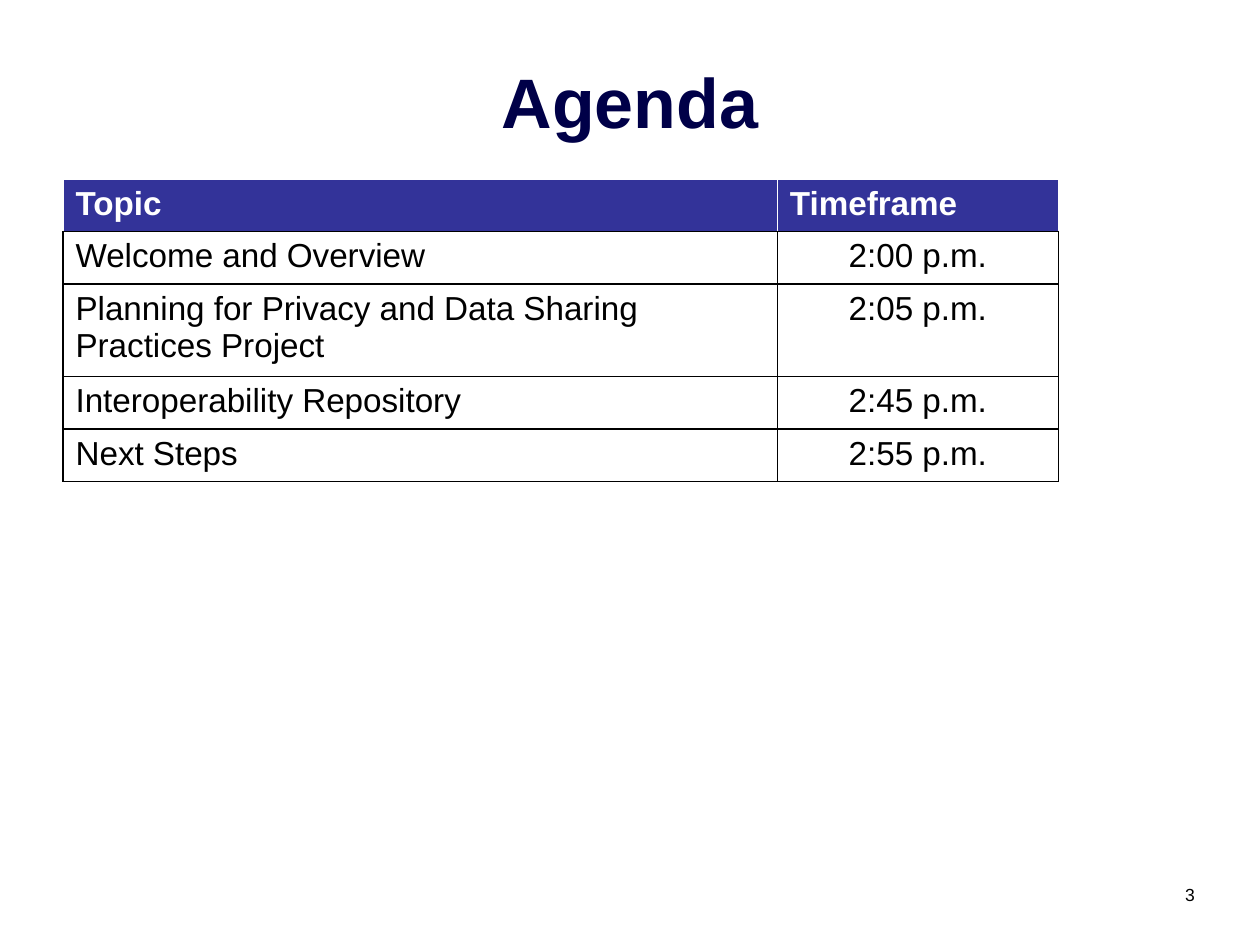
from lxml.etree import SubElement
from pptx import Presentation
from pptx.dml.color import RGBColor
from pptx.enum.text import MSO_ANCHOR, PP_ALIGN
from pptx.oxml.ns import qn
from pptx.util import Inches, Pt

COLORS = {
    "title": "000048",
    "header": "333399",
    "white": "FFFFFF",
    "black": "000000",
}

AGENDA = [
    ("Topic", "Timeframe"),
    ("Welcome and Overview", "2:00 p.m."),
    ("Planning for Privacy and Data Sharing Practices Project", "2:05 p.m."),
    ("Interoperability Repository", "2:45 p.m."),
    ("Next Steps", "2:55 p.m."),
]
COLUMN_WIDTHS = [5.67, 2.23]
ROW_HEIGHTS = [0.41, 0.41, 0.69, 0.41, 0.41]


class SlideBuilder:
    """Holds the style and the current slide."""

    font = "Arial"

    def __init__(self, slide):
        self.slide = slide

    def add_run(self, paragraph, text, size, color, bold=False):
        run = paragraph.add_run()
        run.text = text
        run.font.name = self.font
        run.font.size = Pt(size)
        run.font.bold = bold
        run.font.color.rgb = RGBColor.from_string(COLORS[color])

    def add_text(self, box, text, size, color, align, anchor, bold=False):
        left, top, width, height = map(Inches, box)
        frame = self.slide.shapes.add_textbox(left, top, width, height).text_frame
        frame.word_wrap = True
        frame.vertical_anchor = anchor
        paragraph = frame.paragraphs[0]
        paragraph.alignment = align
        self.add_run(paragraph, text, size, color, bold)

    def set_borders(self, cell, colors):
        properties = cell._tc.get_or_add_tcPr()
        for side, color in zip("LRTB", colors):
            line = SubElement(properties, qn(f"a:ln{side}"), w=str(Pt(1)))
            fill = SubElement(line, qn("a:solidFill"))
            SubElement(fill, qn("a:srgbClr"), val=COLORS[color])

    def add_table(self, left, top, rows, widths, heights):
        table = self.slide.shapes.add_table(
            len(rows), len(widths), Inches(left), Inches(top),
            Inches(sum(widths)), Inches(sum(heights)),
        ).table
        table.horz_banding = False
        for column, width in zip(table.columns, widths):
            column.width = Inches(width)
        for r, (row, height) in enumerate(zip(rows, heights)):
            table.rows[r].height = Inches(height)
            is_header = r == 0
            edge = "white" if is_header else "black"
            for c, text in enumerate(row):
                cell = table.cell(r, c)
                self.set_borders(cell, [edge, edge, edge, "black"])
                if is_header:
                    cell.fill.solid()
                    cell.fill.fore_color.rgb = RGBColor.from_string(COLORS["header"])
                else:
                    cell.fill.background()
                paragraph = cell.text_frame.paragraphs[0]
                centered = c == 1 and not is_header
                paragraph.alignment = PP_ALIGN.CENTER if centered else PP_ALIGN.LEFT
                self.add_run(paragraph, text, 19,
                             "white" if is_header else "black", bold=is_header)


def main():
    deck = Presentation()
    deck.slide_width, deck.slide_height = Inches(10), Inches(7.5)
    builder = SlideBuilder(deck.slides.add_slide(deck.slide_layouts[6]))

    # Page number
    builder.add_text((7.83, 6.83, 1.75, 0.4), "3", 10, "black",
                     PP_ALIGN.RIGHT, MSO_ANCHOR.BOTTOM)
    # Title
    builder.add_text((0.5, 0.17, 9, 1.25), "Agenda", 40, "title",
                     PP_ALIGN.CENTER, MSO_ANCHOR.MIDDLE, bold=True)
    # Agenda table
    builder.add_table(0.5, 1.42, AGENDA, COLUMN_WIDTHS, ROW_HEIGHTS)

    deck.save("out.pptx")


if __name__ == "__main__":
    main()
